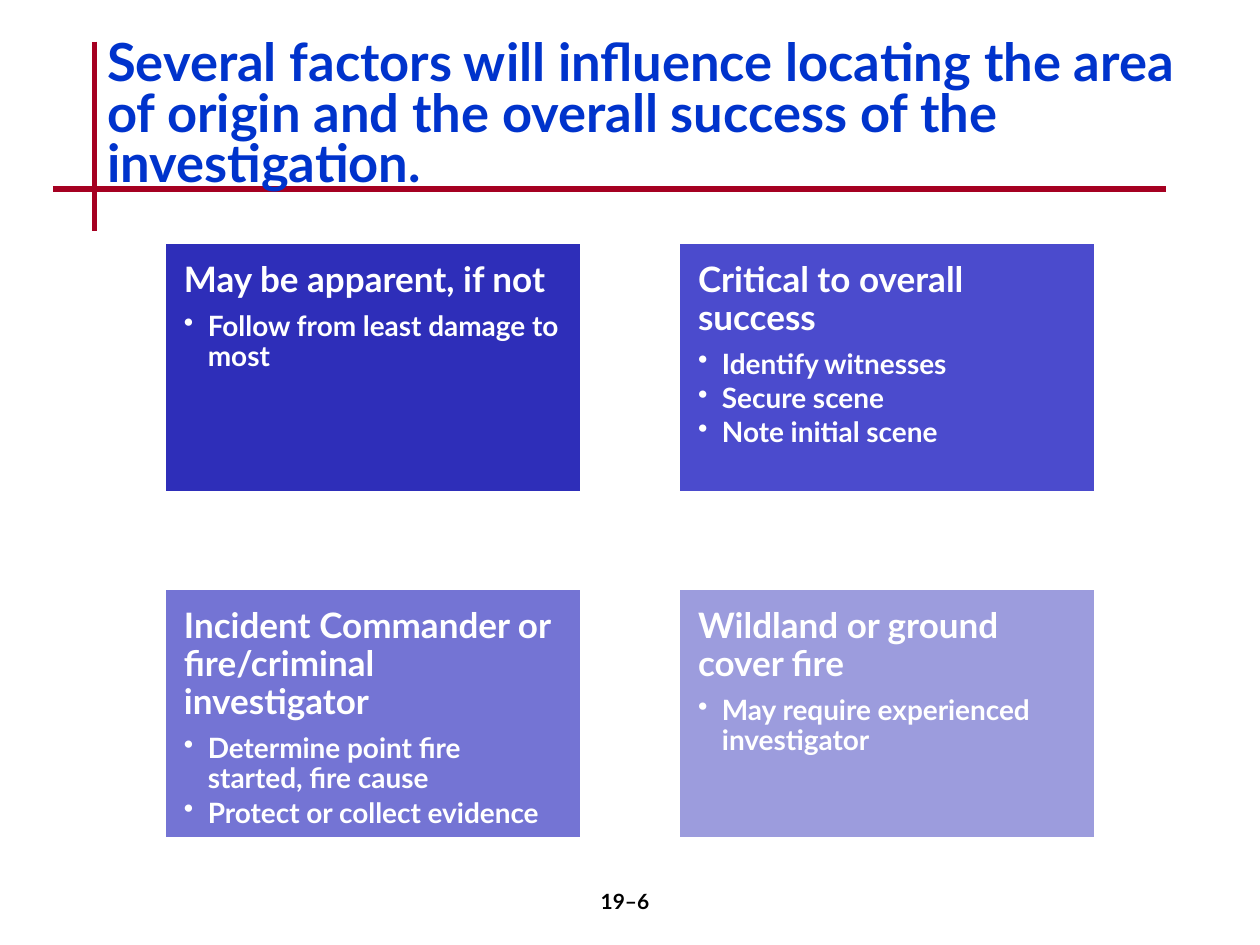
from dataclasses import dataclass

from lxml.etree import SubElement
from pptx import Presentation
from pptx.dml.color import RGBColor
from pptx.enum.shapes import MSO_CONNECTOR, MSO_SHAPE
from pptx.enum.text import MSO_ANCHOR, MSO_AUTO_SIZE, PP_ALIGN
from pptx.oxml.ns import qn
from pptx.util import Inches, Pt

COLORS = {
    "rule": "A50021",
    "title": "0033CC",
    "text": "FFFFFF",
    "border": "FFFFFF",
    "page": "000000",
}
FONT = "Lato"
CARD_LEFT, CARD_TOP = 1.3, 1.92
CARD_WIDTH, CARD_HEIGHT = 3.32, 1.99
COLUMN_STEP, ROW_STEP = 4.08, 2.75
CARD_INSET = Inches(0.16)
BULLET_INDENT = Inches(0.19)


@dataclass
class Factor:
    heading: str
    points: list[str]
    fill: str


@dataclass
class Rule:
    start: tuple[float, float]
    end: tuple[float, float]


FACTORS = [
    Factor("May be apparent, if not", ["Follow from least damage to most"], "2E2EB9"),
    Factor("Critical to overall success",
           ["Identify witnesses", "Secure scene", "Note initial scene"], "4B4BCD"),
    Factor("Incident Commander or fire/criminal investigator",
           ["Determine point fire started, fire cause", "Protect or collect evidence"],
           "7474D4"),
    Factor("Wildland or ground cover fire",
           ["May require experienced investigator"], "9C9CDD"),
]
RULES = [Rule((0.75, 0.33), (0.75, 1.83)), Rule((0.42, 1.5), (9.25, 1.5))]


def rgb(name: str) -> RGBColor:
    return RGBColor.from_string(COLORS[name])


def set_font(paragraph, size: float, color: str) -> None:
    font = paragraph.font
    font.name, font.size, font.bold = FONT, Pt(size), True
    font.color.rgb = rgb(color)


def add_bullet(paragraph) -> None:
    properties = paragraph._p.get_or_add_pPr()
    properties.set("marL", str(BULLET_INDENT))
    properties.set("indent", str(-BULLET_INDENT))
    SubElement(properties, qn("a:buChar")).set("char", "•")


def draw_rule(slide, rule: Rule) -> None:
    line = slide.shapes.add_connector(
        MSO_CONNECTOR.STRAIGHT, *map(Inches, rule.start + rule.end))
    line.line.color.rgb = rgb("rule")
    line.line.width = Pt(3)
    SubElement(line._element.spPr, qn("a:effectLst"))


def draw_factor(slide, factor: Factor, left: float, top: float) -> None:
    card = slide.shapes.add_shape(
        MSO_SHAPE.RECTANGLE, Inches(left), Inches(top),
        Inches(CARD_WIDTH), Inches(CARD_HEIGHT))
    card.shadow.inherit = False
    card.fill.solid()
    card.fill.fore_color.rgb = RGBColor.from_string(factor.fill)
    card.line.color.rgb = rgb("border")
    card.line.width = Pt(2)

    frame = card.text_frame
    frame.word_wrap = True
    frame.vertical_anchor = MSO_ANCHOR.TOP
    frame.margin_left = frame.margin_right = CARD_INSET
    frame.margin_top = frame.margin_bottom = CARD_INSET

    heading = frame.paragraphs[0]
    heading.text = factor.heading
    heading.alignment = PP_ALIGN.LEFT
    heading.line_spacing = 0.9
    heading.space_after = Pt(7)
    set_font(heading, 20, "text")

    for point in factor.points:
        item = frame.add_paragraph()
        item.text = point
        item.level = 1
        item.alignment = PP_ALIGN.LEFT
        item.line_spacing = 0.9
        item.space_after = Pt(2.4)
        add_bullet(item)
        set_font(item, 16, "text")


def main() -> None:
    presentation = Presentation()
    presentation.slide_width, presentation.slide_height = Inches(10), Inches(7.5)
    slide = presentation.slides.add_slide(presentation.slide_layouts[5])

    # Crossed rules beside and below the title
    for rule in RULES:
        draw_rule(slide, rule)

    # Title, brought in front of the rules
    title = slide.shapes.title
    slide.shapes._spTree.append(title._element)
    title.left, title.top = Inches(0.75), Inches(0.28)
    title.width, title.height = Inches(8.69), Inches(1)
    title.text_frame.text = ("Several factors will influence locating the area of origin "
                             "and the overall success of the investigation.")
    title.text_frame.word_wrap = True
    title.text_frame.auto_size = MSO_AUTO_SIZE.NONE
    title.text_frame.vertical_anchor = MSO_ANCHOR.TOP
    title_line = title.text_frame.paragraphs[0]
    title_line.alignment = PP_ALIGN.LEFT
    title_line.line_spacing = 0.8
    set_font(title_line, 30, "title")

    # Page number
    page = slide.shapes.add_textbox(Inches(3.92), Inches(7), Inches(2.08), Inches(0.5))
    page.text_frame.word_wrap = True
    page_number = page.text_frame.paragraphs[0]
    page_number.text = "19–6"
    page_number.alignment = PP_ALIGN.CENTER
    set_font(page_number, 12, "page")

    # Two-by-two grid of factors
    for index, factor in enumerate(FACTORS):
        row, column = divmod(index, 2)
        draw_factor(slide, factor, CARD_LEFT + column * COLUMN_STEP,
                    CARD_TOP + row * ROW_STEP)

    presentation.save("out.pptx")


if __name__ == "__main__":
    main()
